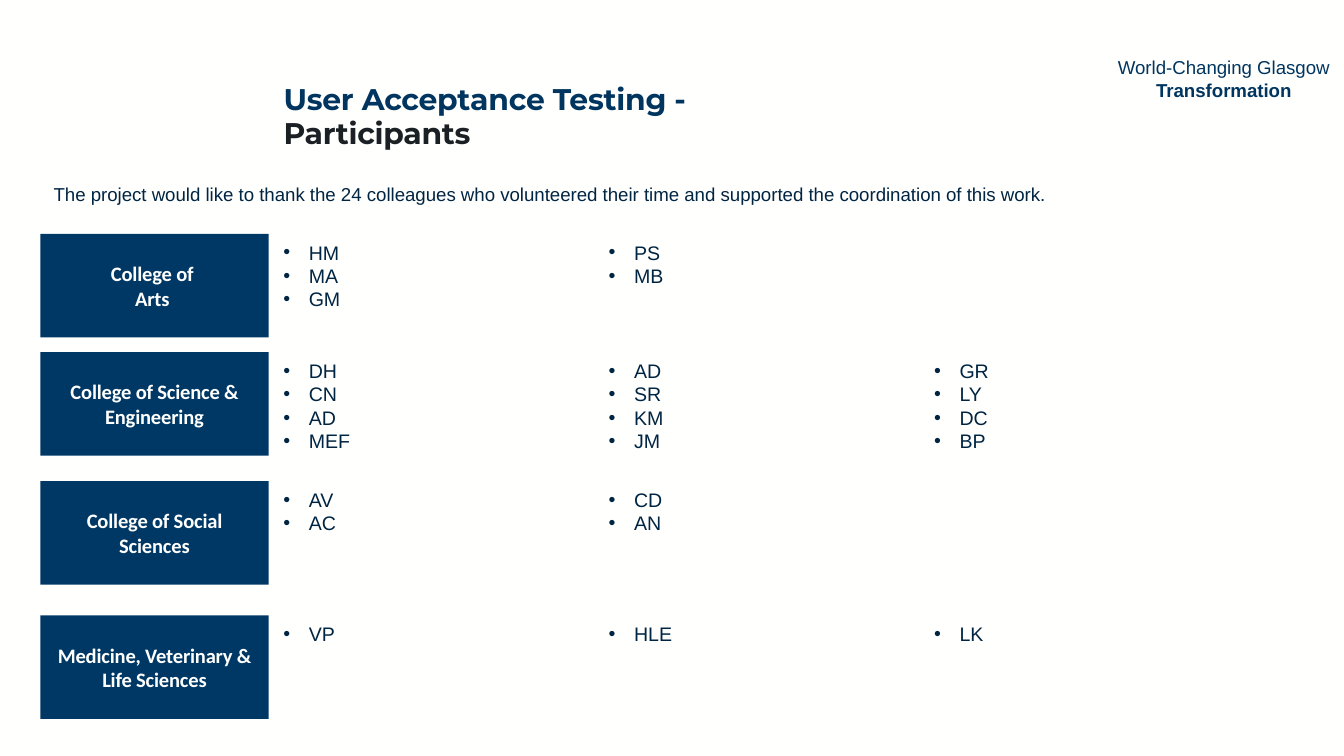
from lxml import etree
from pptx import Presentation
from pptx.dml.color import RGBColor
from pptx.enum.shapes import MSO_SHAPE
from pptx.enum.text import MSO_ANCHOR, MSO_AUTO_SIZE, PP_ALIGN
from pptx.oxml.ns import qn
from pptx.util import Inches, Pt

OFF_WHITE = RGBColor(0xFF, 0xFF, 0xFE)
HEADING_BLUE = RGBColor(0x00, 0x35, 0x5F)
BOX_BLUE = RGBColor(0x00, 0x38, 0x65)
TEXT_BLUE = RGBColor(0x00, 0x25, 0x42)
CHARCOAL = RGBColor(0x1B, 0x20, 0x24)
RECTANGLE = MSO_SHAPE.RECTANGLE
TOP, MIDDLE = MSO_ANCHOR.TOP, MSO_ANCHOR.MIDDLE
LEFT, CENTER = PP_ALIGN.LEFT, PP_ALIGN.CENTER
NO_FIT, GROW = MSO_AUTO_SIZE.NONE, MSO_AUTO_SIZE.SHAPE_TO_FIT_TEXT

SLIDE_WIDTH = 10
SLIDE_HEIGHT = SLIDE_WIDTH * 9 / 16
BODY_FONT, BOX_FONT, TITLE_FONT = "Arial", "Calibri", "Montserrat"
BOX_LEFT, BOX_WIDTH, BOX_HEIGHT = 0.3, 1.7, 0.77
NAMES_LEFT, NAMES_WIDTH, NAME_COLUMNS = 2.01, 7.46, 3
BULLET_INDENT = 0.19

# Top, height of the names box, lines of the college name, participants
COLLEGES = [
    (1.74, 0.63, ["College of ", "Arts "], "HM MA GM PS MB"),
    (2.62, 0.81, ["College of Science & Engineering"],
     "DH CN AD MEF AD SR KM JM GR LY DC BP"),
    (3.58, 0.45, ["College of Social Sciences"], "AV AC CD AN"),
    (4.58, 0.28, ["Medicine, Veterinary & Life Sciences"], "VP HLE LK"),
]


class SlideBuilder:
    def __init__(self, slide):
        self.slide = slide
        slide.background.fill.solid()
        slide.background.fill.fore_color.rgb = OFF_WHITE

    def run(self, paragraph, text, size, color, font=BODY_FONT, bold=False, spacing=None):
        """Add a run; spacing is in hundredths of a point."""
        run = paragraph.add_run()
        run.text = text
        run.font.name = font
        run.font.size = Pt(size)
        run.font.bold = bold
        run.font.color.rgb = color
        if spacing is not None:
            run.font._element.set("spc", str(spacing))

    def paragraphs(self, frame, count):
        """Return the first paragraph of the frame and as many new ones as needed."""
        return [frame.paragraphs[0]] + [frame.add_paragraph() for _ in range(count - 1)]

    def title(self, left, top, width, height):
        shape = self.slide.shapes.title
        shape.left, shape.top = Inches(left), Inches(top)
        shape.width, shape.height = Inches(width), Inches(height)
        frame = shape.text_frame
        frame.auto_size = NO_FIT
        frame.vertical_anchor = TOP
        paragraph = frame.paragraphs[0]
        paragraph.alignment = LEFT
        paragraph.line_spacing = 0.9
        self.run(paragraph, "User Acceptance Testing -", 16, HEADING_BLUE, TITLE_FONT, True, -10)
        self.run(paragraph, " ", 20, HEADING_BLUE, BODY_FONT, True, -10)
        paragraph.add_line_break()
        self.run(paragraph, "Participants", 16, CHARCOAL, TITLE_FONT, True, -10)

    def text_box(self, left, top, width, height):
        shape = self.slide.shapes.add_textbox(
            Inches(left), Inches(top), Inches(width), Inches(height))
        frame = shape.text_frame
        frame.word_wrap = True
        frame.auto_size = GROW
        return frame

    def college_box(self, top, lines):
        shape = self.slide.shapes.add_shape(
            RECTANGLE, Inches(BOX_LEFT), Inches(top), Inches(BOX_WIDTH), Inches(BOX_HEIGHT))
        shape.shadow.inherit = False
        shape.fill.solid()
        shape.fill.fore_color.rgb = BOX_BLUE
        shape.line.fill.background()
        frame = shape.text_frame
        frame.word_wrap = True
        frame.vertical_anchor = MIDDLE
        frame.margin_left = frame.margin_right = Inches(0.07)
        frame.margin_top = frame.margin_bottom = Inches(0.04)
        for paragraph, line in zip(self.paragraphs(frame, len(lines)), lines):
            paragraph.alignment = CENTER
            self.run(paragraph, line, 11, OFF_WHITE, BOX_FONT, True, -10)

    def participants(self, top, height, names):
        frame = self.text_box(NAMES_LEFT, top, NAMES_WIDTH, height)
        frame._txBody.bodyPr.set("numCol", str(NAME_COLUMNS))
        for paragraph, name in zip(self.paragraphs(frame, len(names)), names):
            self.bullet(paragraph)
            self.run(paragraph, name, 10.5, TEXT_BLUE)

    def bullet(self, paragraph):
        properties = paragraph._p.get_or_add_pPr()
        properties.set("marL", str(Inches(BULLET_INDENT)))
        properties.set("indent", str(-Inches(BULLET_INDENT)))
        etree.SubElement(properties, qn("a:buFont"), typeface=BODY_FONT)
        etree.SubElement(properties, qn("a:buChar"), char="•")


def main():
    presentation = Presentation()
    presentation.slide_width = Inches(SLIDE_WIDTH)
    presentation.slide_height = Inches(SLIDE_HEIGHT)
    title_only = presentation.slide_layouts[5]
    builder = SlideBuilder(presentation.slides.add_slide(title_only))

    programme = builder.text_box(8.18, 0.37, 1.85, 0.44).paragraphs[0]
    programme.alignment = CENTER
    builder.run(programme, "World-Changing Glasgow ", 10, HEADING_BLUE)
    builder.run(programme, "Transformation", 10, HEADING_BLUE, bold=True)

    builder.title(2.01, 0.53, 6.23, 0.71)

    thanks = builder.text_box(0.3, 1.31, 9.25, 0.28).paragraphs[0]
    builder.run(thanks, "The project would like to thank the 24 colleagues who volunteered "
                "their time and supported the coordination of this work.", 10, TEXT_BLUE)

    for top, names_height, college_lines, names in COLLEGES:
        builder.college_box(top, college_lines)
        builder.participants(top, names_height, names.split())

    presentation.save("out.pptx")


if __name__ == "__main__":
    main()
